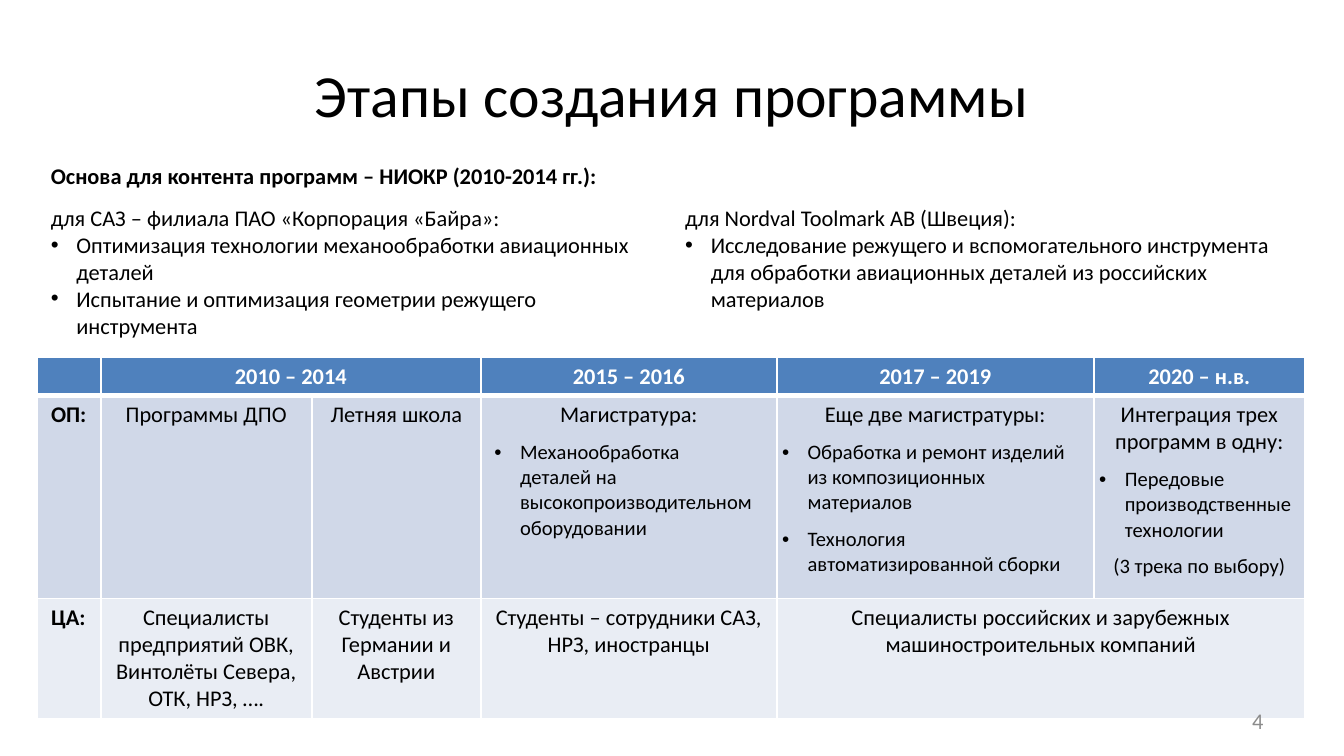
from pptx import Presentation
from pptx.dml.color import RGBColor
from pptx.enum.text import MSO_ANCHOR, PP_ALIGN
from pptx.oxml.ns import qn
from pptx.util import Inches, Pt
from lxml.etree import SubElement, Element

COLS = [0.47, 1.57, 1.26, 2.2, 2.36, 1.57]
ROWS = [0.24, 1.51, 0.76]
FILLS = ["4F81BD", "D0D8E8", "E9EDF4"]
CELLS = [
    [[""], ["2010 – 2014"], None, ["2015 – 2016"], ["2017 – 2019"], ["2020 – н.в."]],
    [
        ["ОП:"],
        ["Программы ДПО"],
        ["Летняя школа"],
        ["Магистратура:",
         "•Механообработка \vдеталей на высокопроизводительном оборудовании"],
        ["Еще две магистратуры:",
         "•Обработка и ремонт изделий из композиционных материалов",
         "•Технология автоматизированной сборки"],
        ["Интеграция трех программ в одну:",
         "•Передовые производственные технологии",
         "(3 трека по выбору)"],
    ],
    [
        ["ЦА:"],
        ["Специалисты предприятий ОВК, Винтолёты Севера, ОТК, НРЗ, …."],
        ["Студенты из Германии и Австрии"],
        ["Студенты – сотрудники САЗ, НРЗ, иностранцы"],
        ["Специалисты российских и зарубежных машиностроительных компаний"],
        None,
    ],
]


def paint(color):
    return RGBColor.from_string(color)


def style(para, size, color="000000", bold=False, align=PP_ALIGN.LEFT):
    para.alignment = align
    font = para.font
    font.name = "Calibri"
    font.size = Pt(size)
    font.bold = bold
    font.color.rgb = paint(color)


def add_dot(para):
    props = para._p.get_or_add_pPr()
    props.set("marL", str(Inches(0.19)))
    props.set("indent", str(-Inches(0.19)))
    SubElement(props, qn("a:buFont"), typeface="Arial")
    SubElement(props, qn("a:buChar"), char="•")


def write(frame, lines, after=0, small=12, align=PP_ALIGN.LEFT, **look):
    for i, line in enumerate(lines):
        para = frame.add_paragraph() if i else frame.paragraphs[0]
        dot = line.startswith("•")
        para.text = line.lstrip("•")
        para.space_after = Pt(after)
        if dot:
            add_dot(para)
        style(para, small if i else 12, align=PP_ALIGN.LEFT if dot else align, **look)


def add_text(slide, box, lines, anchor=MSO_ANCHOR.TOP, **look):
    frame = slide.shapes.add_textbox(*map(Inches, box)).text_frame
    frame.word_wrap = True
    frame.vertical_anchor = anchor
    write(frame, lines, **look)


def add_title(slide, text):
    title = slide.shapes.title
    title.left, title.top, title.width, title.height = map(Inches, (0.5, 0.23, 9, 0.94))
    title.text_frame.text = text
    title.text_frame.vertical_anchor = MSO_ANCHOR.MIDDLE
    style(title.text_frame.paragraphs[0], 32, align=PP_ALIGN.CENTER)


def add_edges(cell, row):
    props = cell._tc.get_or_add_tcPr()
    wide = {"lnB": row == 0, "lnT": row == 1}
    for i, side in enumerate(("lnL", "lnR", "lnT", "lnB")):
        line = Element(qn("a:" + side), w=str(Pt(3 if wide.get(side) else 1)))
        fill = SubElement(line, qn("a:solidFill"))
        SubElement(fill, qn("a:srgbClr"), val="FFFFFF")
        props.insert(i, line)


def fill_cell(cell, lines, row, col):
    side = 0.04 if col > 3 and row < 2 else 0.1
    cell.margin_left = cell.margin_right = Inches(side)
    cell.margin_top = cell.margin_bottom = Inches(0.04)
    cell.fill.solid()
    cell.fill.fore_color.rgb = paint(FILLS[row])
    add_edges(cell, row)
    write(
        cell.text_frame, lines or [""],
        after=6 if lines and len(lines) > 1 else 0,
        small=11,
        align=PP_ALIGN.CENTER if col else PP_ALIGN.LEFT,
        color="000000" if row else "FFFFFF",
        bold=row == 0 or col == 0,
    )


def add_grid(slide):
    box = map(Inches, (0.28, 2.66, sum(COLS), sum(ROWS)))
    table = slide.shapes.add_table(len(ROWS), len(COLS), *box).table
    for col, width in zip(table.columns, COLS):
        col.width = Inches(width)
    for row, height in zip(table.rows, ROWS):
        row.height = Inches(height)
    for r, line in enumerate(CELLS):
        for c, lines in enumerate(line):
            fill_cell(table.cell(r, c), lines, r, c)
            if lines is None:
                table.cell(r, c - 1).merge(table.cell(r, c))


def main():
    deck = Presentation()
    deck.slide_width = Inches(10)
    deck.slide_height = Inches(10) * 9 // 16
    slide = deck.slides.add_slide(deck.slide_layouts[5])
    add_title(slide, "Этапы создания программы")
    add_grid(slide)
    add_text(slide, (0.28, 1.47, 4.72, 1.11), [
        "для САЗ – филиала ПАО «Корпорация «Байра»:",
        "•Оптимизация технологии механообработки авиационных деталей",
        "•Испытание и оптимизация геометрии режущего инструмента",
    ])
    add_text(slide, (5, 1.47, 4.72, 0.91), [
        "для Nordval Toolmark AB (Швеция):",
        "•Исследование режущего и вспомогательного инструмента "
        "для обработки авиационных деталей из российских материалов",
    ])
    add_text(slide, (0.28, 1.16, 5, 0.3),
             ["Основа для контента программ – НИОКР (2010-2014 гг.):"], bold=True)
    add_text(slide, (7.17, 5.21, 2.33, 0.3), ["4"], MSO_ANCHOR.MIDDLE,
             align=PP_ALIGN.RIGHT, color="8C8C8C")
    deck.save("out.pptx")


if __name__ == "__main__":
    main()
